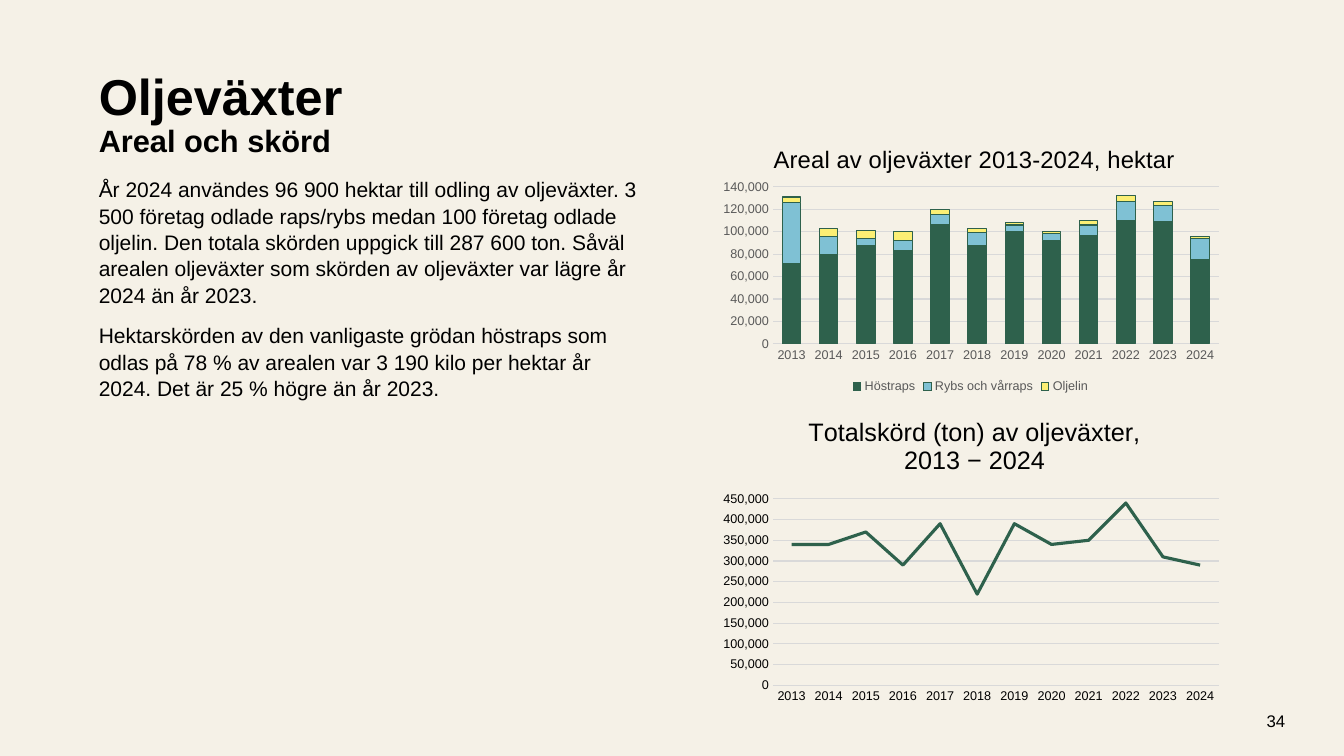
from dataclasses import dataclass
from typing import Optional

from lxml import etree
from pptx import Presentation
from pptx import util as u
from pptx.chart.data import CategoryChartData
from pptx.dml.color import RGBColor
from pptx.enum import chart as ch
from pptx.enum import text
from pptx.oxml.ns import qn

FONT = "Arial"
COLORS = {
    "background": "F5F1E7",
    "text": "000000",
    "muted": "595959",
    "grid": "D9D9D9",
    "green": "2E614C",
    "blue": "7FC1D4",
    "yellow": "FBEF74",
}
YEARS = [str(year) for year in range(2013, 2025)]
BODY = [
    "År 2024 användes 96 900 hektar till odling av oljeväxter. "
    "3 500 företag odlade raps/rybs medan 100 företag odlade oljelin. "
    "Den totala skörden uppgick till 287 600 ton. Såväl arealen oljeväxter "
    "som skörden av oljeväxter var lägre år 2024 än år 2023.",
    "Hektarskörden av den vanligaste grödan höstraps som odlas på 78 % av "
    "arealen var 3 190 kilo per hektar år 2024. Det är 25 % högre än år 2023.",
]


@dataclass
class Box:
    x: float
    y: float
    w: float
    h: float


@dataclass
class Series:
    name: str
    color: str
    thousands: list[int]


@dataclass
class ChartSpec:
    kind: ch.XL_CHART_TYPE
    box: Box
    title: list[str]
    title_size: float
    title_at: tuple[float, float]
    plot: Box  # fractions of the chart area
    label_color: str
    top: int
    step: int
    series: list[Series]
    legend: bool


AREA = ChartSpec(
    ch.XL_CHART_TYPE.COLUMN_STACKED, Box(509, 90, 368.6, 194.4),
    ["Areal av oljeväxter 2013-2024, hektar"], 17, (0.11, 0.05),
    Box(0.117, 0.224, 0.864, 0.577), "muted", 140000, 20000,
    [
        Series("Höstraps", "green",
               [72, 80, 88, 83, 106, 88, 100, 92, 97, 110, 109, 75]),
        Series("Rybs och vårraps", "blue",
               [54, 16, 6, 9, 9, 11, 6, 6, 9, 17, 14, 19]),
        Series("Oljelin", "yellow", [5, 7, 7, 8, 5, 4, 2, 2, 4, 5, 4, 2]),
    ],
    True,
)
HARVEST = ChartSpec(
    ch.XL_CHART_TYPE.LINE, Box(509, 290.9, 368.6, 216),
    ["Totalskörd (ton) av oljeväxter,", "2013 − 2024"], 18, (0.18, 0.02),
    Box(0.117, 0.303, 0.864, 0.617), "text", 450000, 50000,
    [Series("Totalskörd", "green",
            [340, 340, 370, 290, 390, 220, 390, 340, 350, 440, 310, 290])],
    False,
)


def rgb(name: str) -> RGBColor:
    return RGBColor.from_string(COLORS[name])


def style(font, size: float, color: str = "text", bold: bool = False) -> None:
    font.name, font.size, font.bold = FONT, u.Pt(size), bold
    font.color.rgb = rgb(color)


def add_run(p, words: str, size: float, bold: bool = False) -> None:
    r = p.add_run()
    r.text = words
    style(r.font, size, bold=bold)


def place(sp, box: Box) -> None:
    sp.left, sp.top = u.Pt(box.x), u.Pt(box.y)
    sp.width, sp.height = u.Pt(box.w), u.Pt(box.h)


def set_line(line, color: str, width: float) -> None:
    line.color.rgb = rgb(color)
    line.width = u.Pt(width)


def set_layout(parent, index: int, x: float, y: float,
               w: Optional[float] = None, h: Optional[float] = None) -> None:
    """Fix a chart part at fractions of the chart area."""
    for old in parent.findall(qn("c:layout")):
        parent.remove(old)
    layout = etree.Element(qn("c:layout"))
    manual = etree.SubElement(layout, qn("c:manualLayout"))
    values = {"xMode": "edge", "yMode": "edge", "x": x, "y": y}
    if w is not None:
        values = {"layoutTarget": "inner", **values, "w": w, "h": h}
    for tag, value in values.items():
        etree.SubElement(manual, qn(f"c:{tag}")).set("val", str(value))
    parent.insert(index, layout)


def format_axes(chart, spec: ChartSpec) -> None:
    cat, val = chart.category_axis, chart.value_axis
    for axis in (cat, val):
        axis.major_tick_mark = axis.minor_tick_mark = ch.XL_TICK_MARK.NONE
        style(axis.tick_labels.font, 9, spec.label_color)
    cat.has_major_gridlines = False
    set_line(cat.format.line, "grid", 0.75)
    val.has_major_gridlines = True
    set_line(val.major_gridlines.format.line, "grid", 0.75)
    val.format.line.fill.background()
    val.minimum_scale, val.maximum_scale = 0, spec.top
    val.major_unit = spec.step
    val.tick_labels.number_format = "#,##0"
    val.tick_labels.number_format_is_linked = False


def add_chart(s, spec: ChartSpec) -> None:
    data = CategoryChartData(number_format="#,##0")
    data.categories = YEARS
    for series in spec.series:
        data.add_series(series.name, [n * 1000 for n in series.thousands])
    box = spec.box
    chart = s.shapes.add_chart(spec.kind, u.Pt(box.x), u.Pt(box.y),
                               u.Pt(box.w), u.Pt(box.h), data).chart
    style(chart.font, 10)
    chart.has_title = True
    tf = chart.chart_title.text_frame
    for i, words in enumerate(spec.title):
        p = tf.add_paragraph() if i else tf.paragraphs[0]
        p.alignment = text.PP_ALIGN.CENTER
        add_run(p, words, spec.title_size)
    chart.chart_title.include_in_layout = False
    title = chart._chartSpace.chart.find(qn("c:title"))
    set_layout(title, 1, *spec.title_at)
    plot_box = spec.plot
    set_layout(chart._chartSpace.chart.plotArea, 0,
               plot_box.x, plot_box.y, plot_box.w, plot_box.h)

    format_axes(chart, spec)
    plot = chart.plots[0]
    plot.vary_by_categories = False
    stacked = spec.kind == ch.XL_CHART_TYPE.COLUMN_STACKED
    if stacked:
        plot.gap_width, plot.overlap = 100, 100
    for drawn, series in zip(plot.series, spec.series):
        set_line(drawn.format.line, "green", 0.75 if stacked else 2.25)
        if stacked:
            drawn.format.fill.solid()
            drawn.format.fill.fore_color.rgb = rgb(series.color)
        else:
            drawn.smooth = False
            drawn.marker.style = ch.XL_MARKER_STYLE.NONE
    chart.has_legend = spec.legend
    if spec.legend:
        chart.legend.position = ch.XL_LEGEND_POSITION.BOTTOM
        chart.legend.include_in_layout = False
        style(chart.legend.font, 9, "muted")


def fill_title(sp) -> None:
    place(sp, Box(63.36, 37.44, 733.7, 79.9))
    tf = sp.text_frame
    tf.auto_size = text.MSO_AUTO_SIZE.NONE
    tf.vertical_anchor = text.MSO_ANCHOR.BOTTOM
    p = tf.paragraphs[0]
    p.alignment, p.line_spacing = text.PP_ALIGN.LEFT, 0.9
    add_run(p, "Oljeväxter", 36, True)
    p.add_line_break()
    add_run(p, "Areal och skörd", 22, True)


def fill_body(sp) -> None:
    place(sp, Box(63.36, 121.7, 401.8, 169.2))
    tf = sp.text_frame
    tf.auto_size = text.MSO_AUTO_SIZE.NONE
    for i, words in enumerate(BODY):
        p = tf.add_paragraph() if i else tf.paragraphs[0]
        p.line_spacing, p.space_before = 1.05, u.Pt(10 if i else 0)
        ppr = p._p.get_or_add_pPr()
        ppr.set("marL", "0")
        ppr.set("indent", "0")
        etree.SubElement(ppr, qn("a:buNone"))
        add_run(p, words, 15)


def add_page_number(s) -> None:
    sp = s.shapes.add_textbox(u.Pt(841.7), u.Pt(500.4), u.Pt(83.5), u.Pt(28.8))
    tf = sp.text_frame
    tf.word_wrap = True
    tf.vertical_anchor = text.MSO_ANCHOR.MIDDLE
    p = tf.paragraphs[0]
    p.alignment = text.PP_ALIGN.RIGHT
    add_run(p, "34", 12)


def main() -> None:
    prs = Presentation()
    prs.slide_width, prs.slide_height = u.Pt(960), u.Pt(540)
    s = prs.slides.add_slide(prs.slide_layouts[1])
    s.background.fill.solid()
    s.background.fill.fore_color.rgb = rgb("background")
    fill_title(s.shapes.title)
    fill_body(s.placeholders[1])
    add_page_number(s)
    for spec in (AREA, HARVEST):
        add_chart(s, spec)
    prs.save("out.pptx")


if __name__ == "__main__":
    main()
